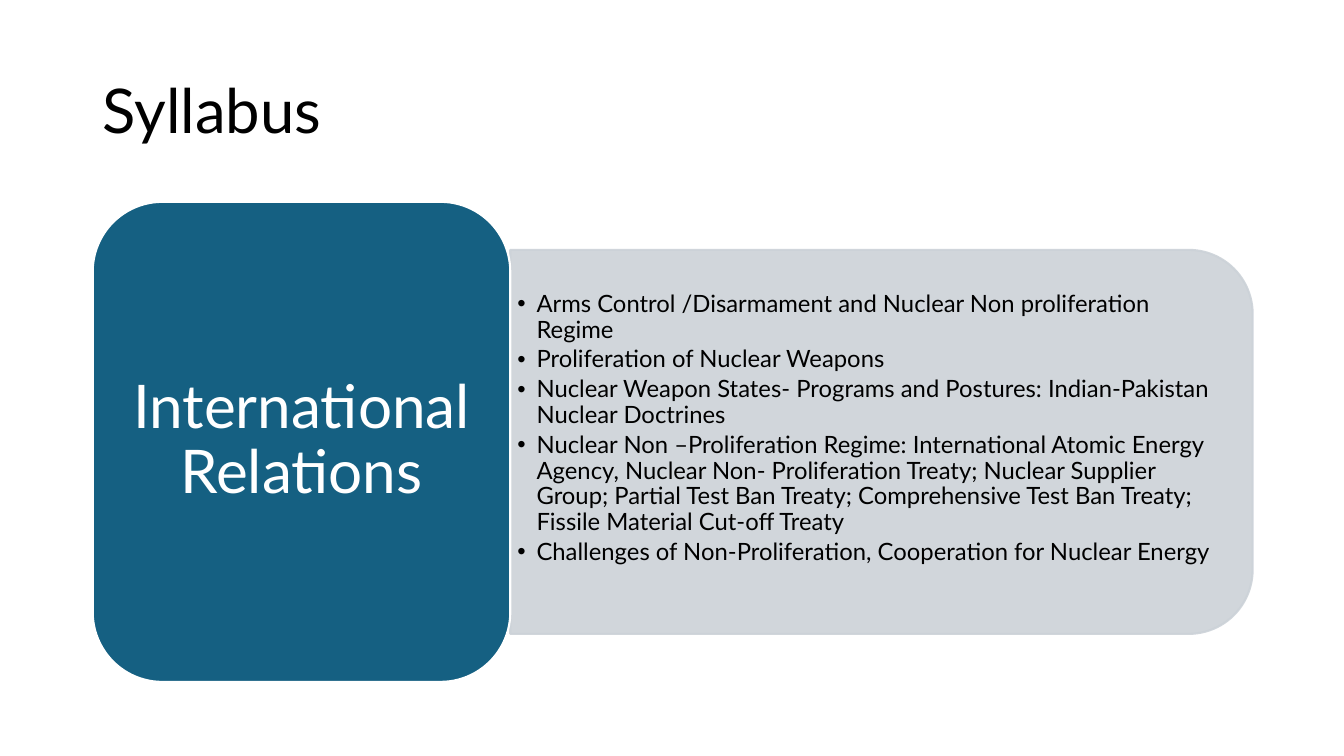
from dataclasses import dataclass

from lxml.etree import SubElement
from pptx import Presentation
from pptx.dml.color import RGBColor as Color
from pptx.enum.shapes import MSO_SHAPE as Preset
from pptx.enum.text import MSO_ANCHOR as Anchor, PP_ALIGN as Align
from pptx.oxml.ns import qn
from pptx.util import Inches, Pt

WIDTH, HEIGHT = 13.33, 7.5
TITLE_BOX = (0.069 * WIDTH, 0.053 * HEIGHT, 0.863 * WIDTH, 0.193 * HEIGHT)
SYLLABUS_BOX = (0.069 * WIDTH, 0.267 * HEIGHT, 0.863 * WIDTH, 0.635 * HEIGHT)
SUBJECT_SHARE, TOPICS_HEIGHT_SHARE = 0.36, 0.8
TOPICS = [
    "Arms Control /Disarmament and Nuclear Non proliferation Regime",
    "Proliferation of Nuclear Weapons",
    "Nuclear Weapon States- Programs and Postures: Indian-Pakistan Nuclear Doctrines",
    "Nuclear Non –Proliferation Regime: International Atomic Energy Agency, "
    "Nuclear Non- Proliferation Treaty; Nuclear Supplier Group; Partial Test Ban Treaty; "
    "Comprehensive Test Ban Treaty; Fissile Material Cut-off Treaty",
    "Challenges of Non-Proliferation, Cooperation for Nuclear Energy",
]


@dataclass(frozen=True)
class Theme:
    font: str = "Lato"
    text: str = "000000"
    light: str = "FFFFFF"
    subject: str = "156082"
    topics: str = "CCD2D8"
    topics_opacity: int = 90
    title_size: int = 44
    subject_size: int = 43
    topic_size: int = 17
    outline: float = 1.5


THEME = Theme()


def set_format(target, values):
    for name, value in values.items():
        setattr(target, name, value)


def write(frame, lines, size, color, insets, align=Align.LEFT, space_after=0):
    left, top, right, bottom = map(Inches, insets)
    set_format(frame, dict(word_wrap=True, vertical_anchor=Anchor.MIDDLE, margin_left=left,
                           margin_top=top, margin_right=right, margin_bottom=bottom))
    for index, line in enumerate(lines):
        paragraph = frame.paragraphs[0] if index == 0 else frame.add_paragraph()
        set_format(paragraph, dict(text=line, alignment=align, line_spacing=0.9,
                                   space_before=Pt(0), space_after=Pt(space_after)))
        set_format(paragraph.font, dict(name=THEME.font, size=Pt(size)))
        paragraph.font.color.rgb = Color.from_string(color)


def add_panel(slide, preset, box, fill, line, opacity=100):
    shape = slide.shapes.add_shape(preset, *map(Inches, box))
    shape.shadow.inherit = False
    shape.fill.solid()
    shape.line.width = Pt(THEME.outline)
    shape.fill.fore_color.rgb = Color.from_string(fill)
    shape.line.color.rgb = Color.from_string(line)
    if opacity < 100:
        for color in shape.element.spPr.iter(qn("a:srgbClr")):
            SubElement(color, qn("a:alpha"), val=str(opacity * 1000))
    return shape


def add_bullet(paragraph, indent):
    properties = paragraph._p.get_or_add_pPr()
    properties.set("marL", str(Inches(indent)))
    properties.set("indent", str(-Inches(indent)))
    SubElement(properties, qn("a:buFont"), typeface="Arial")
    SubElement(properties, qn("a:buChar"), char="•")


def add_title(slide, box, title):
    frame = slide.shapes.add_textbox(*map(Inches, box)).text_frame
    write(frame, [title], THEME.title_size, THEME.text, (0.1, 0.05, 0.1, 0.05))


def add_topics(slide, box, topics):
    left, top, width, height = box
    upright = (left + (width - height) / 2, top + (height - width) / 2, height, width)
    panel = add_panel(slide, Preset.ROUND_2_SAME_RECTANGLE, upright,
                      THEME.topics, THEME.topics, THEME.topics_opacity)
    panel.rotation = 90
    corner = 0.05 * height
    text_box = (left, top + corner, width - corner, height - 2 * corner)
    frame = slide.shapes.add_textbox(*map(Inches, text_box)).text_frame
    write(frame, topics, THEME.topic_size, THEME.text, (0.07, 0.04, 0.07, 0.3), space_after=3)
    for paragraph in frame.paragraphs:
        add_bullet(paragraph, 0.19)


def add_subject(slide, box, subject):
    panel = add_panel(slide, Preset.ROUNDED_RECTANGLE, box, THEME.subject, THEME.light)
    write(panel.text_frame, [subject], THEME.subject_size, THEME.light,
          (0.18, 0.09, 0.18, 0.09), Align.CENTER)


def add_syllabus(slide, box, subject, topics):
    left, top, width, height = box
    subject_width = SUBJECT_SHARE * width
    topics_height = TOPICS_HEIGHT_SHARE * height
    add_topics(slide, (left + subject_width, top + (height - topics_height) / 2,
                       width - subject_width, topics_height), topics)
    add_subject(slide, (left, top, subject_width, height), subject)


def main():
    presentation = Presentation()
    set_format(presentation, dict(slide_width=Inches(WIDTH), slide_height=Inches(HEIGHT)))
    slide = presentation.slides.add_slide(presentation.slide_layouts[6])
    add_title(slide, TITLE_BOX, "Syllabus")
    add_syllabus(slide, SYLLABUS_BOX, "International Relations", TOPICS)
    presentation.save("out.pptx")


if __name__ == "__main__":
    main()
